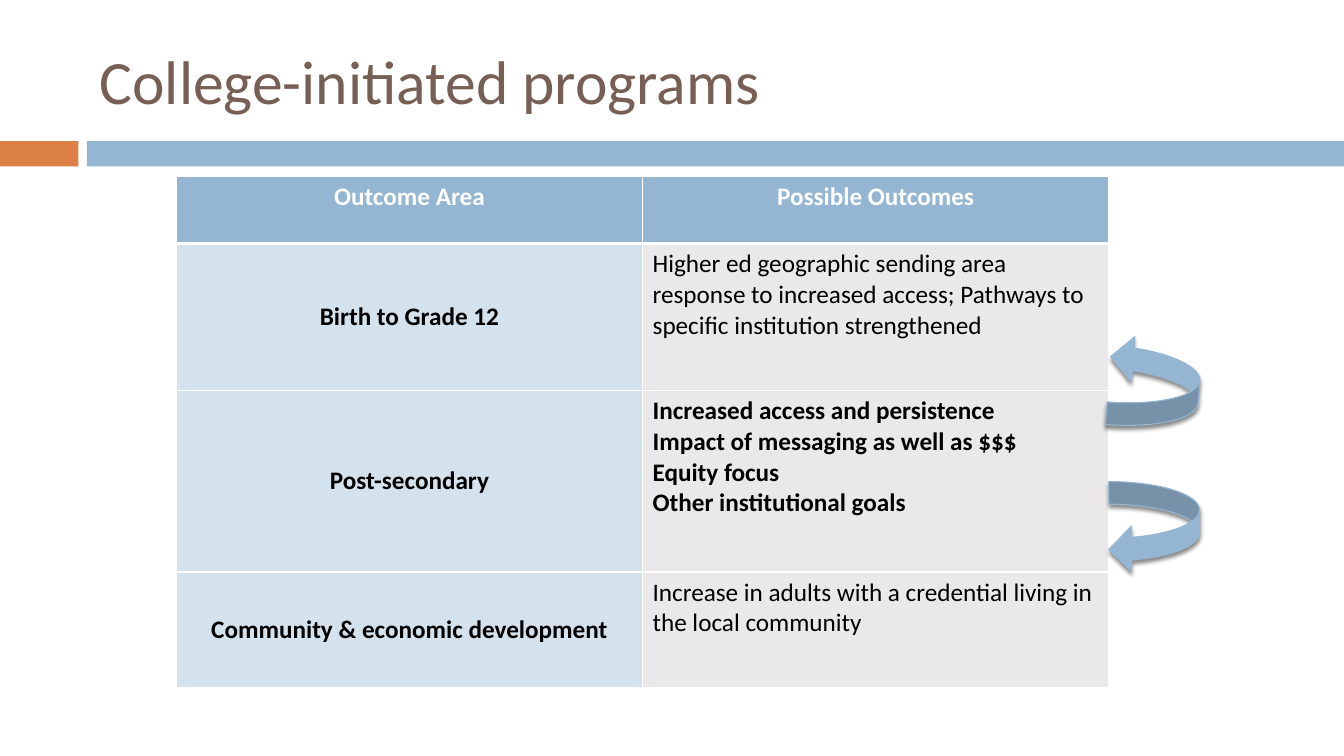
from lxml import etree
from pptx import Presentation
from pptx.dml.color import RGBColor
from pptx.enum.shapes import MSO_SHAPE
from pptx.enum.text import MSO_ANCHOR, PP_ALIGN
from pptx.oxml import parse_xml
from pptx.oxml.ns import nsdecls, qn
from pptx.util import Pt

RECTANGLE = MSO_SHAPE.RECTANGLE
ARROW_UP = MSO_SHAPE.CURVED_UP_ARROW
ARROW_DOWN = MSO_SHAPE.CURVED_DOWN_ARROW
MIDDLE, TOP = MSO_ANCHOR.MIDDLE, MSO_ANCHOR.TOP
CENTER, LEFT = PP_ALIGN.CENTER, PP_ALIGN.LEFT

FONT = "Calibri"
COLORS = {
    "title": "775F55",
    "orange": "DD8047",
    "blue": "94B6D2",
    "area": "D4E2ED",
    "outcome": "EAE8E8",
    "white": "FFFFFF",
    "black": "000000",
}
HEADINGS = ("Outcome Area", "Possible Outcomes")
OUTCOMES = [
    ("Birth to Grade 12",
     "Higher ed geographic sending area response to increased access; "
     "Pathways to specific institution strengthened", False),
    ("Post-secondary",
     "Increased access and persistence\nImpact of messaging as well as $$$\n"
     "Equity focus\nOther institutional goals", True),
    ("Community & economic development",
     "Increase in adults with a credential living in the local community", False),
]
ROW_HEIGHTS = (48, 105, 129.6, 82.8)


def color(name):
    """Return the named colour."""
    return RGBColor.from_string(COLORS[name])


def format_text(text_frame, size, color_name, bold, alignment):
    """Format every paragraph and run of a text frame."""
    for paragraph in text_frame.paragraphs:
        paragraph.alignment = alignment
        for run in paragraph.runs:
            run.font.name = FONT
            run.font.size = Pt(size)
            run.font.bold = bold
            run.font.color.rgb = color(color_name)


def add_title(slide, text, left, top, width, height):
    """Place and format the title placeholder."""
    title = slide.shapes.title
    title.left, title.top = Pt(left), Pt(top)
    title.width, title.height = Pt(width), Pt(height)
    title.text_frame.text = text
    title.text_frame.vertical_anchor = MIDDLE
    format_text(title.text_frame, 44, "title", False, LEFT)


def add_band(slide, left, top, width, height):
    """Draw the two-colour band, with a gap between its parts."""
    accent, gap = 56, 6
    rest = accent + gap
    for name, offset, length in (("orange", 0, accent), ("blue", rest, width - rest)):
        shape = slide.shapes.add_shape(
            RECTANGLE, Pt(left + offset), Pt(top), Pt(length), Pt(height))
        shape.shadow.inherit = False
        shape.fill.solid()
        shape.fill.fore_color.rgb = color(name)
        shape.line.fill.background()


def set_borders(cell, bottom_width):
    """Give a cell white borders, with the bottom one in its own width."""
    properties = cell._tc.get_or_add_tcPr()
    widths = {"lnL": 1, "lnR": 1, "lnT": 1, "lnB": bottom_width}
    for index, (tag, width) in enumerate(widths.items()):
        properties.insert(index, parse_xml(
            f'<a:{tag} {nsdecls("a")} w="{Pt(width)}"><a:solidFill>'
            f'<a:srgbClr val="{COLORS["white"]}"/></a:solidFill></a:{tag}>'))


def fill_cell(cell, text, fill, font_color, bold, alignment, anchor, bottom_width=1):
    """Write and style one table cell."""
    cell.text_frame.text = text
    cell.vertical_anchor = anchor
    cell.fill.solid()
    cell.fill.fore_color.rgb = color(fill)
    format_text(cell.text_frame, 18, font_color, bold, alignment)
    set_borders(cell, bottom_width)


def add_outcome_table(slide, left, top, width):
    """Build the table of outcome areas and possible outcomes."""
    table = slide.shapes.add_table(
        len(ROW_HEIGHTS), len(HEADINGS), Pt(left), Pt(top),
        Pt(width), Pt(sum(ROW_HEIGHTS))).table
    for column in table.columns:
        column.width = Pt(width / len(HEADINGS))
    for row, height in zip(table.rows, ROW_HEIGHTS):
        row.height = Pt(height)
    for index, heading in enumerate(HEADINGS):
        fill_cell(table.cell(0, index), heading, "blue", "white", True, CENTER, TOP, 3)
    for index, (area, outcome, bold) in enumerate(OUTCOMES, start=1):
        fill_cell(table.cell(index, 0), area, "area", "black", True, CENTER, MIDDLE)
        fill_cell(table.cell(index, 1), outcome, "outcome", "black", bold, LEFT, TOP)


def add_curved_arrow(slide, kind, left, top, size, rotation):
    """Draw a curved arrow with a soft shadow below it."""
    arrow = slide.shapes.add_shape(kind, Pt(left), Pt(top), Pt(size), Pt(size))
    arrow.rotation = rotation
    arrow.fill.solid()
    arrow.fill.fore_color.rgb = color("blue")
    arrow.line.color.rgb = color("blue")
    arrow.line.width = Pt(0.79)
    arrow.shadow.inherit = False
    effects = arrow._element.spPr.find(qn("a:effectLst"))
    shadow = etree.SubElement(
        effects, qn("a:outerShdw"), blurRad=str(Pt(3)), dist=str(Pt(2.4)),
        dir="5400000", rotWithShape="0")
    shade = etree.SubElement(shadow, qn("a:srgbClr"), val=COLORS["black"])
    etree.SubElement(shade, qn("a:alpha"), val="45000")


def main():
    """Build and save the slide."""
    presentation = Presentation()
    presentation.slide_width, presentation.slide_height = Pt(960), Pt(540)
    slide = presentation.slides.add_slide(presentation.slide_layouts[5])
    add_band(slide, 0, 100.8, 960, 18)
    add_title(slide, "College-initiated programs", 64, 18, 856, 78)
    add_outcome_table(slide, 126, 126, 666)
    add_curved_arrow(slide, ARROW_UP, 792, 241, 64.8, 274.4)
    add_curved_arrow(slide, ARROW_DOWN, 792, 344, 64.8, 90)
    presentation.save("out.pptx")


if __name__ == "__main__":
    main()
